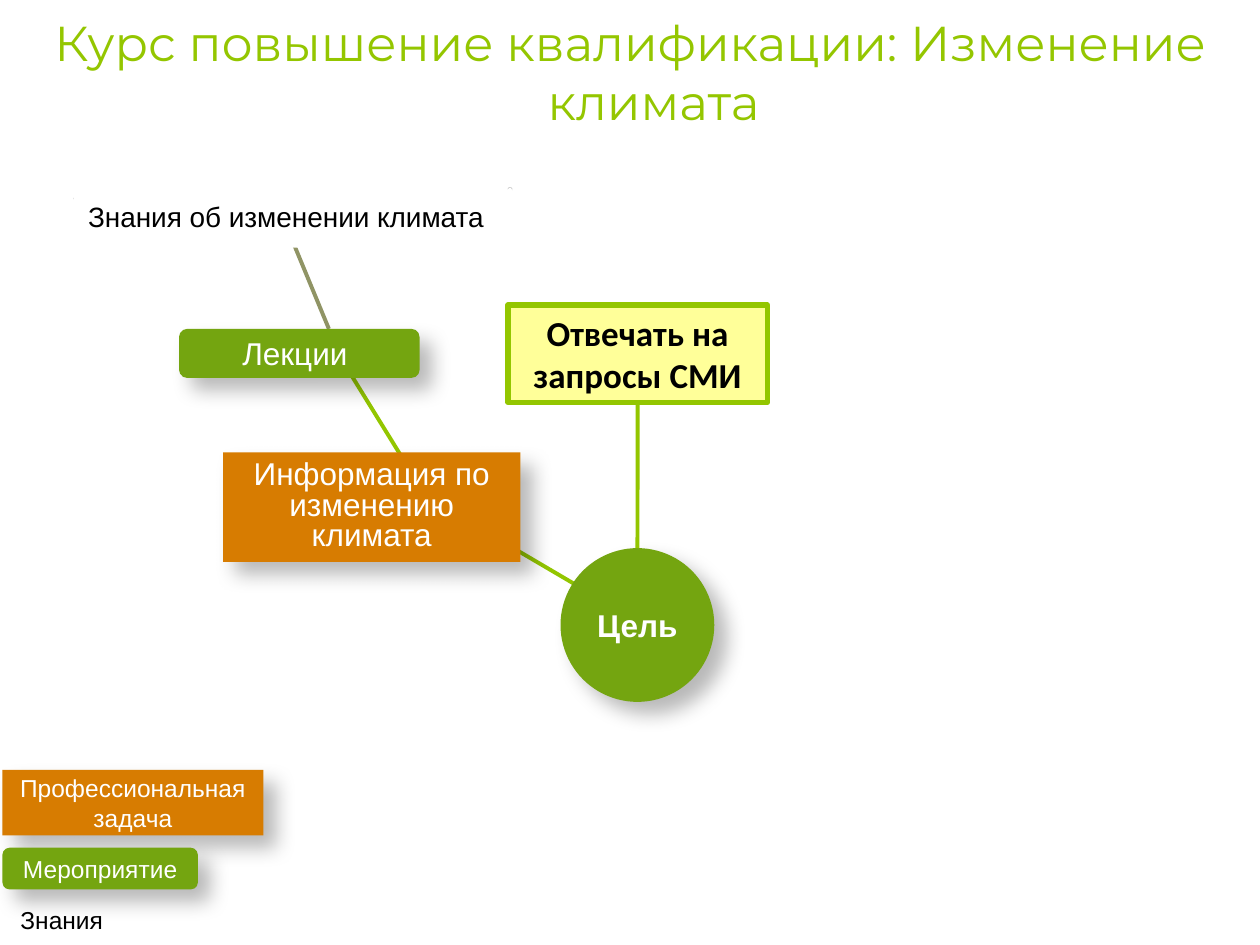
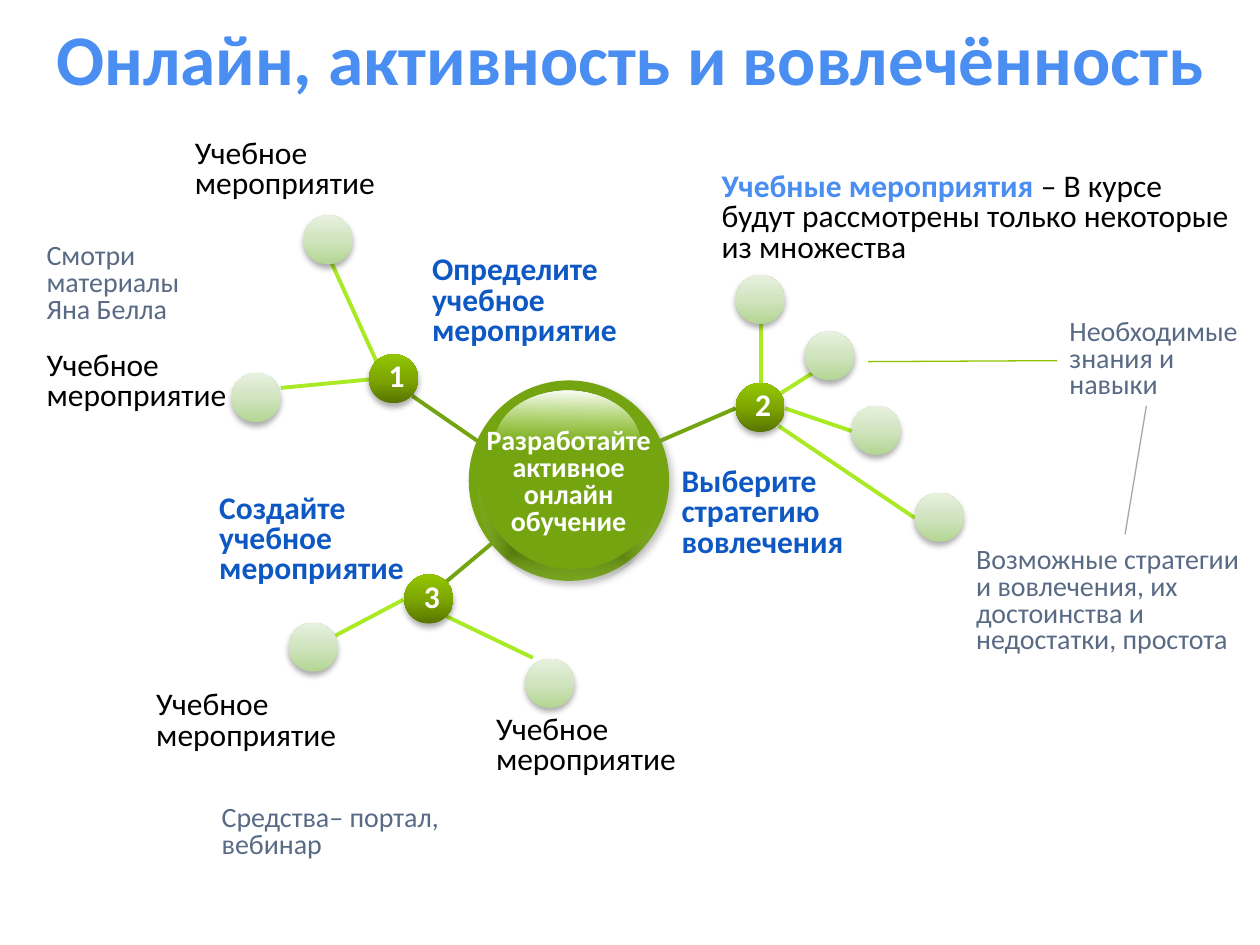
from pptx import Presentation
from pptx.dml.color import RGBColor
from pptx.enum.shapes import MSO_CONNECTOR, MSO_SHAPE
from pptx.enum.text import MSO_ANCHOR, PP_ALIGN
from pptx.oxml import parse_xml
from pptx.oxml.ns import nsdecls, qn
from pptx.util import Cm, Pt

HUE = {
    "white": "FFFFFF", "black": "000000", "grey": "808080",
    "green": "74A510", "lime": "94C600", "edge": "93C600", "pale": "AAEA25",
    "orange": "D77C01", "cream": "FFFF99", "olive": "909465",
    "blue": "4A8EF2", "deep": "0E58C4", "slate": "596A85",
    "silver": "A6A6A6", "thin": "91C200",
}
UP = '<a:lin ang="16200000" scaled="0"/>'
DOWN = '<a:lin ang="5460000" scaled="0"/>'
CORE = ('<a:path path="shape"><a:fillToRect l="50000" t="50000" '
        'r="50000" b="50000"/></a:path>')
DARK = ([(0, "587500", 100), (50, "7DA700", 100), (100, "94C600", 100)], UP)
SOFT = ([(0, "B3D693", 100), (50, "D0E4BF", 100), (100, "E8F1E0", 100)], UP)
GLOSS = ([(0, "FFFFFF", 100), (54, "D5FFA2", 0)], DOWN)
RIM = ([(24, "000000", 24), (100, "FFFFFF", 0)], CORE)
DEEP = ("black", 28, 11.8, 10, 45)
LOW = ("black", 32, 3.5, 2.2, 90)
BALL = ("grey", 43, 4, 3, 45)


def put(slide, kind, at, text="", size=18, color="black", bold=False, font="Calibri",
        center=False, middle=False, tight=False, fill=None, line=None, shade=None):
    box = [Cm(n) for n in at]
    if kind is None:
        shape = slide.shapes.add_textbox(*box)
    else:
        shape = slide.shapes.add_shape(kind, *box)
        shape.shadow.inherit = False
        props = shape._element.spPr
        if isinstance(fill, str):
            shape.fill.solid()
            shape.fill.fore_color.rgb = RGBColor.from_string(HUE[fill])
        else:
            stops = "".join(
                f'<a:gs pos="{pos * 1000}"><a:srgbClr val="{tone}">'
                f'<a:alpha val="{alpha * 1000}"/></a:srgbClr></a:gs>'
                for pos, tone, alpha in fill[0])
            shape.fill.background()
            props.replace(props.find(qn("a:noFill")), parse_xml(
                f'<a:gradFill {nsdecls("a")} rotWithShape="1">'
                f'<a:gsLst>{stops}</a:gsLst>{fill[1]}</a:gradFill>'))
        if line:
            shape.line.color.rgb = RGBColor.from_string(HUE[line[0]])
            shape.line.width = Pt(line[1])
        else:
            shape.line.fill.background()
        if shade:
            tone, alpha, blur, dist, turn = shade
            props.find(qn("a:effectLst")).append(parse_xml(
                f'<a:outerShdw {nsdecls("a")} blurRad="{Pt(blur)}" dist="{Pt(dist)}" '
                f'dir="{turn * 60000}" algn="tl" rotWithShape="0">'
                f'<a:srgbClr val="{HUE[tone]}"><a:alpha val="{alpha * 1000}"/>'
                f'</a:srgbClr></a:outerShdw>'))
    if text:
        frame = shape.text_frame
        frame.word_wrap = True
        frame.vertical_anchor = MSO_ANCHOR.MIDDLE if middle else MSO_ANCHOR.TOP
        frame.text = text
        para = frame.paragraphs[0]
        para.alignment = PP_ALIGN.CENTER if center else PP_ALIGN.LEFT
        if tight:
            para.line_spacing = 0.8
        face = para.runs[0].font
        face.name, face.size, face.bold = font, Pt(size), bold
        face.color.rgb = RGBColor.from_string(HUE[color])
    return shape


def link(slide, ends, color, width=2.25):
    wire = slide.shapes.add_connector(MSO_CONNECTOR.STRAIGHT, *[Cm(n) for n in ends])
    wire.line.color.rgb = RGBColor.from_string(HUE[color])
    wire.line.width = Pt(width)
    wire._element.spPr.append(parse_xml(f'<a:effectLst {nsdecls("a")}/>'))
    return wire


deck = Presentation()
deck.slide_width, deck.slide_height = Cm(25.4), Cm(19.05)
blank = deck.slide_layouts[6]

course = deck.slides.add_slide(blank)
link(course, (9.09, 10.31, 11.61, 11.79), "edge")
link(course, (8.51, 9.88, 6.63, 6.83), "edge")
link(course, (6.63, 6.63, 5.84, 4.72), "olive")

for at, text, size in [
    ((1.35, 3.73, 9.02, 1.4), "Знания об изменении климата", 16),
    ((0.05, 18.14, 3.66, 0.91), "Знания", 14),
]:
    put(course, MSO_SHAPE.HORIZONTAL_SCROLL, at, text, size, font="Arial",
        middle=True, tight=True, fill="white", line=("white", 2))

for kind, at, text, size, fill, tight in [
    (MSO_SHAPE.ROUNDED_RECTANGLE, (3.61, 6.63, 4.85, 0.99), "Лекции ", 18, "green", False),
    (MSO_SHAPE.RECTANGLE, (4.5, 9.12, 5.99, 2.21),
     "Информация по изменению климата", 18, "orange", True),
    (MSO_SHAPE.RECTANGLE, (0.05, 15.52, 5.26, 1.32),
     "Профессиональная задача", 14, "orange", False),
    (MSO_SHAPE.ROUNDED_RECTANGLE, (0.05, 17.09, 3.94, 0.84),
     "Мероприятие", 14, "green", False),
]:
    put(course, kind, at, text, size, "white", font="Arial", center=True,
        middle=True, tight=tight, fill=fill, shade=DEEP)

goal = put(course, MSO_SHAPE.OVAL, (11.3, 11.05, 3.1, 3.1), "Цель", 18, "white", True,
           "Arial", center=True, middle=True, fill="green", shade=DEEP)
press = put(course, MSO_SHAPE.RECTANGLE, (10.24, 6.15, 5.23, 1.96),
            "Отвечать на запросы СМИ", 20, bold=True, center=True,
            fill="cream", line=("edge", 3))
stem = link(course, (12.85, 8.11, 12.85, 11.05), "edge")
stem.begin_connect(press, 2)
stem.end_connect(goal, 0)

title = put(course, None, (0, 0.13, 25.4, 2.64),
            "Курс повышение квалификации: Изменение климата", 28, "lime",
            font="Montserrat", center=True)
hang = title.text_frame.paragraphs[0]._p.get_or_add_pPr()
hang.set("marL", str(Cm(0.95)))
hang.set("indent", str(-Cm(0.95)))

online = deck.slides.add_slide(blank)
for ends in [
    (15.34, 8.18, 16.38, 7.52), (15.34, 7.72, 15.34, 6.53),
    (15.82, 8.23, 17.17, 8.69), (15.7, 8.59, 18.44, 10.44),
    (8.13, 12.09, 5.97, 13.23), (8.99, 12.42, 10.74, 13.26),
    (7.59, 7.29, 6.63, 5.18), (7.44, 7.65, 5.66, 7.82),
]:
    link(online, ends, "pale")
for ends in [
    (13, 9.02, 14.83, 8.23), (9.98, 10.9, 8.99, 11.73), (9.7, 8.94, 8.31, 7.98),
]:
    link(online, ends, "green")

dot = 0.99
for num, (x, y) in enumerate([(7.44, 7.14), (14.83, 7.72), (8.15, 11.58)], 1):
    put(online, MSO_SHAPE.OVAL, (x, y, dot, dot), str(num), 18, "white", True,
        center=True, middle=True, tight=True, fill=DARK, shade=LOW)
for x, y in [
    (16.23, 6.68), (5.82, 12.55), (10.59, 13.28), (6.12, 4.34),
    (4.67, 7.52), (14.83, 5.54), (18.44, 9.93), (17.17, 8.18),
]:
    put(online, MSO_SHAPE.OVAL, (x, y, dot, dot), fill=SOFT, shade=LOW)

put(online, MSO_SHAPE.OVAL, (9.45, 7.67, 4.04, 4.04), fill="green", shade=BALL)
put(online, MSO_SHAPE.OVAL, (9.98, 7.87, 2.92, 2.16), fill=GLOSS)
put(online, None, (9.27, 8.53, 4.39, 2.44), "Разработайте активное онлайн обучение",
    16, "white", True, center=True, tight=True)
moon = put(online, MSO_SHAPE.MOON, (10.46, 9.02, 1.88, 3.71), fill=RIM)
moon.adjustments[0] = 0.19
moon.rotation = 275.9

put(online, None, (0, 0.18, 25.4, 1.93), "Онлайн, активность и вовлечённость",
    40.7, "blue", True, center=True, middle=True)

for at, text in [
    ((8.46, 5.05, 4.72, 2.11), "Определите учебное мероприятие"),
    ((13.49, 9.32, 4.14, 2.11), "Выберите стратегию вовлечения"),
    ((4.17, 9.86, 4.62, 2.11), "Создайте учебное мероприятие"),
]:
    put(online, None, at, text, 18, "deep", True, tight=True)

for at in [
    (0.69, 6.93, 4.6, 1.57), (3.68, 2.51, 4.5, 1.85),
    (9.75, 14.27, 4.17, 1.57), (2.9, 13.77, 4.37, 1.57),
]:
    put(online, None, at, "Учебное мероприятие", middle=True, tight=True)

lead = put(online, None, (14.3, 3.28, 10.8, 2.26), "Учебные мероприятия ", 18, "blue",
           True, middle=True, tight=True)
rest = lead.text_frame.paragraphs[0].add_run()
rest.text = "– В курсе будут рассмотрены только некоторые из множества"
rest.font.name, rest.font.size, rest.font.bold = "Calibri", Pt(18), False
rest.font.color.rgb = RGBColor.from_string(HUE["black"])

notes = [
    put(online, None, at, text, 16, "slate", tight=True)
    for at, text in [
        ((21.31, 6.32, 4.09, 1.9), "Необходимые знания и навыки"),
        ((0.69, 4.8, 3.81, 1.9), "Смотри материалы Яна Белла"),
        ((19.43, 10.92, 5.97, 2.44),
         "Возможные стратегии и вовлечения, их достоинства и недостатки, простота"),
        ((4.22, 16.13, 6.81, 0.81), "Средства– портал, вебинар"),
    ]
]
link(online, (23.11, 8.18, 22.68, 10.77), "silver", 0.75)
link(online, (17.5, 7.29, 21.31, 7.27), "thin", 0.75).end_connect(notes[0], 1)

deck.save("out.pptx")
